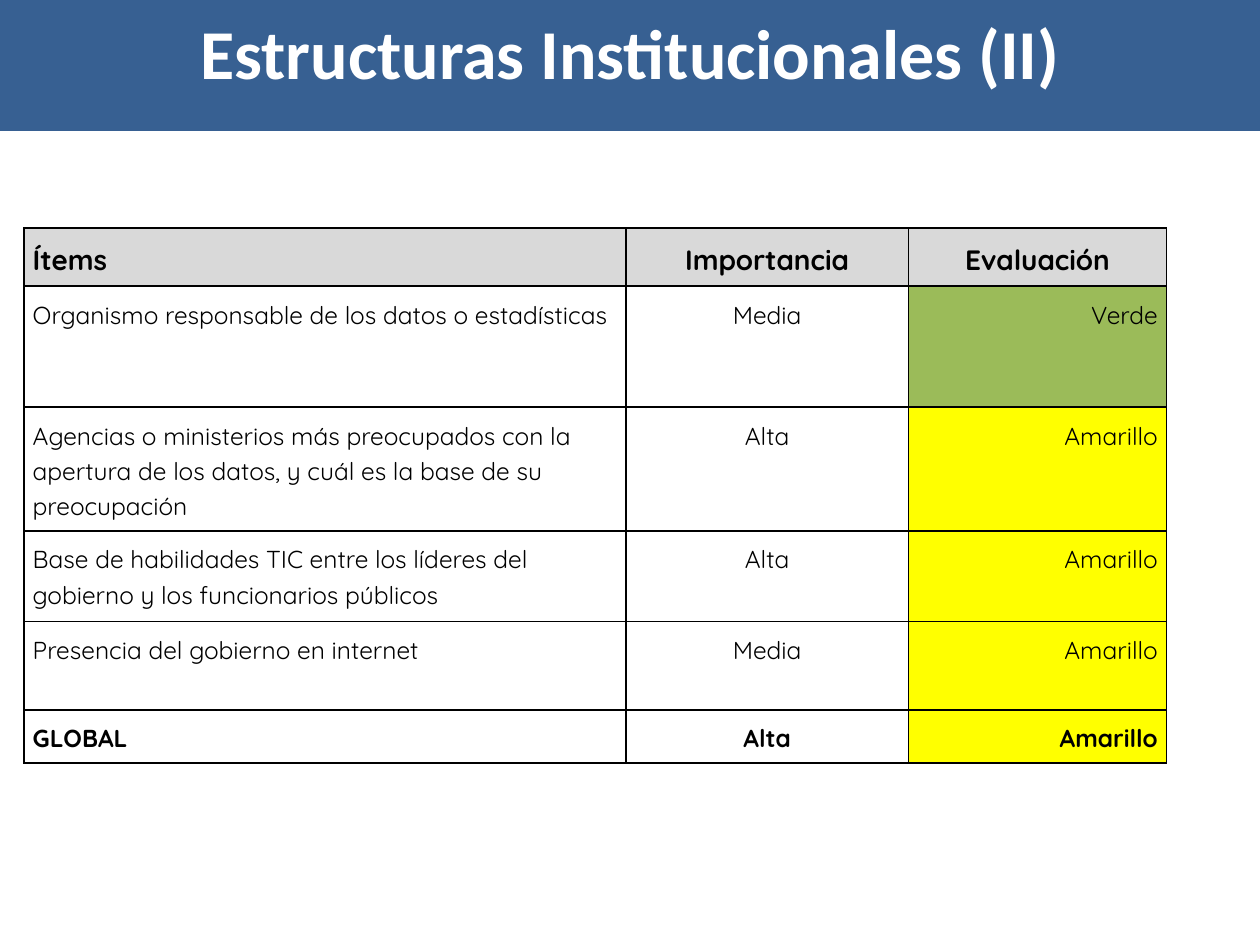
"""Build the slide that rates the institutional structures."""
from lxml import etree
from pptx import Presentation
from pptx.dml.color import RGBColor
from pptx.enum.text import MSO_ANCHOR, MSO_AUTO_SIZE, PP_ALIGN
from pptx.oxml.ns import qn
from pptx.util import Cm, Pt

LEFT, CENTER, RIGHT, JUSTIFY = PP_ALIGN.LEFT, PP_ALIGN.CENTER, PP_ALIGN.RIGHT, PP_ALIGN.JUSTIFY
TOP = MSO_ANCHOR.TOP
NO_AUTOFIT = MSO_AUTO_SIZE.NONE

COLORS = {
    "banner": "376092",
    "title": "FFFFFF",
    "text": "000000",
    "border": "000000",
    "header": "D9D9D9",
    "Verde": "9BBB59",
    "Amarillo": "FFFF00",
}
TITLE = "Estructuras Institucionales (II)"
HEADER = ("Ítems", "Importancia", "Evaluación")
ITEMS = [
    ("Organismo responsable de los datos o estadísticas", "Media", "Verde"),
    ("Agencias o ministerios más preocupados con la apertura de los datos, "
     "y cuál es la base de su preocupación", "Alta", "Amarillo"),
    ("Base de habilidades TIC entre los líderes del gobierno y los funcionarios públicos",
     "Alta", "Amarillo"),
    ("Presencia del gobierno en internet", "Media", "Amarillo"),
]
OVERALL = ("GLOBAL", "Alta", "Amarillo")
COLUMN_WIDTHS = (12.14, 5.69, 5.21)
ROW_HEIGHTS = (0.86, 2.44, 2.34, 1.83, 1.78, 0.84)


def rgb(name):
    return RGBColor.from_string(COLORS[name])


def style_paragraph(paragraph, font_name, size, bold, color, alignment):
    paragraph.alignment = alignment
    for run in paragraph.runs:
        run.font.name = font_name
        run.font.size = Pt(size)
        run.font.bold = bold
        run.font.color.rgb = rgb(color)


def add_borders(cell):
    properties = cell._tc.get_or_add_tcPr()
    for position, side in enumerate(("lnL", "lnR", "lnT", "lnB")):
        line = etree.Element(qn(f"a:{side}"), w=str(Pt(1)))
        solid = etree.SubElement(line, qn("a:solidFill"))
        etree.SubElement(solid, qn("a:srgbClr"), val=COLORS["border"])
        properties.insert(position, line)


def fill_cell(cell, text, size, bold, alignment, fill):
    cell.text_frame.text = text
    paragraph = cell.text_frame.paragraphs[0]
    style_paragraph(paragraph, "Quicksand", size, bold, "text", alignment)
    paragraph.line_spacing = 1.15
    if bold:
        paragraph.space_after = Pt(10)
    cell.vertical_anchor = TOP
    cell.margin_left = cell.margin_right = Cm(0.18)
    cell.margin_top = cell.margin_bottom = Cm(0.18)
    if fill:
        cell.fill.solid()
        cell.fill.fore_color.rgb = rgb(fill)
    else:
        cell.fill.background()
    add_borders(cell)


def add_banner(slide, width):
    banner = slide.shapes.title
    banner.left, banner.top, banner.width, banner.height = 0, 0, width, Cm(2.64)
    banner.fill.solid()
    banner.fill.fore_color.rgb = rgb("banner")
    frame = banner.text_frame
    frame.text = TITLE
    frame.auto_size = NO_AUTOFIT
    frame.vertical_anchor = TOP
    frame.margin_top = Cm(0.2)
    style_paragraph(frame.paragraphs[0], "Calibri", 40, True, "title", CENTER)


def add_ratings(slide):
    rows = [HEADER, *ITEMS, OVERALL]
    ratings = slide.shapes.add_table(
        len(rows), len(HEADER), Cm(0.48), Cm(4.6),
        Cm(sum(COLUMN_WIDTHS)), Cm(sum(ROW_HEIGHTS))).table
    for column, width in zip(ratings.columns, COLUMN_WIDTHS):
        column.width = Cm(width)
    for row, height in zip(ratings.rows, ROW_HEIGHTS):
        row.height = Cm(height)
    for r, texts in enumerate(rows):
        is_header, is_overall = texts is HEADER, texts is OVERALL
        alignments = (JUSTIFY if is_overall else LEFT, CENTER, CENTER if is_header else RIGHT)
        for c, (text, alignment) in enumerate(zip(texts, alignments)):
            fill = "header" if is_header else text if text in COLORS else None
            fill_cell(ratings.cell(r, c), text, 16 if is_header else 14,
                      is_header or is_overall, alignment, fill)


def main():
    presentation = Presentation()
    presentation.slide_width, presentation.slide_height = Cm(25.4), Cm(19.05)
    slide = presentation.slides.add_slide(presentation.slide_layouts[5])
    add_banner(slide, presentation.slide_width)
    add_ratings(slide)
    presentation.save("out.pptx")


if __name__ == "__main__":
    main()
